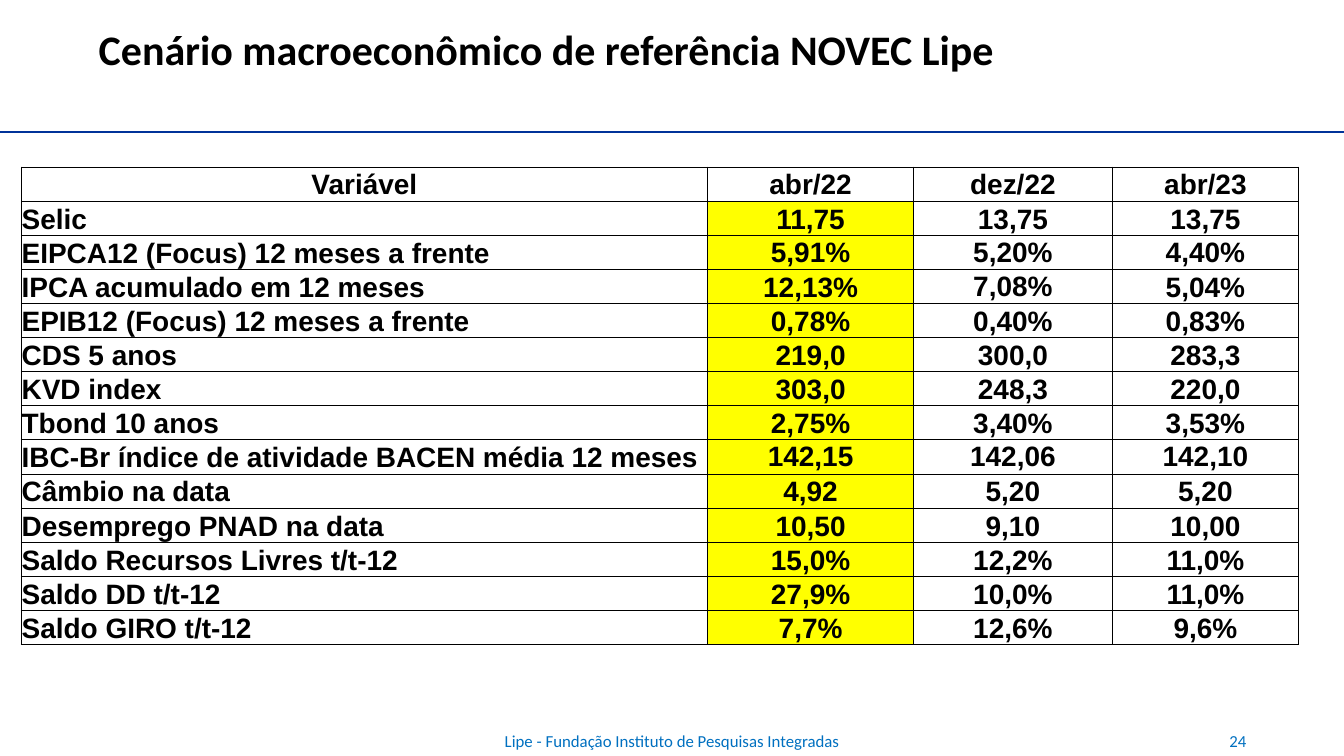
from typing import NamedTuple

from lxml.etree import SubElement
from pptx import Presentation
from pptx.dml.color import RGBColor
from pptx.enum.shapes import MSO_CONNECTOR
from pptx.enum.text import MSO_ANCHOR as Anchor, PP_ALIGN as Align
from pptx.oxml.ns import qn
from pptx.util import Inches, Pt

WIDTH, HEIGHT = 26.67, 15
BLACK, NAVY, BLUE, YELLOW = "000000", "003399", "0070C0", "FFFF00"
COLUMN_WIDTHS = (13.62, 4.09, 3.94, 3.7)
ROW_HEIGHT = 0.67
TABLE_LEFT, TABLE_TOP = 0.42, 3.31
HIGHLIGHT_COLUMN = 1


class Box(NamedTuple):
    left: float
    top: float
    width: float
    height: float


class Indicator(NamedTuple):
    name: str
    values: tuple[str, str, str]
    centred: tuple[int, ...] = ()  # columns whose text sits in the middle


HEADER = Indicator("Variável", ("abr/22", "dez/22", "abr/23"))
INDICATORS = (
    Indicator("Selic", ("11,75", "13,75", "13,75")),
    Indicator("EIPCA12 (Focus) 12 meses a frente", ("5,91%", "5,20%", "4,40%"), (1, 2, 3)),
    Indicator("IPCA acumulado em 12 meses", ("12,13%", "7,08%", "5,04%"), (2,)),
    Indicator("EPIB12 (Focus) 12 meses a frente", ("0,78%", "0,40%", "0,83%")),
    Indicator("CDS 5 anos", ("219,0", "300,0", "283,3")),
    Indicator("KVD index", ("303,0", "248,3", "220,0")),
    Indicator("Tbond 10 anos", ("2,75%", "3,40%", "3,53%")),
    Indicator("IBC-Br índice de atividade BACEN média 12 meses",
              ("142,15", "142,06", "142,10"), (1, 2, 3)),
    Indicator("Câmbio na data", ("4,92", "5,20", "5,20")),
    Indicator("Desemprego PNAD na data", ("10,50", "9,10", "10,00")),
    Indicator("Saldo Recursos Livres t/t-12", ("15,0%", "12,2%", "11,0%")),
    Indicator("Saldo DD t/t-12", ("27,9%", "10,0%", "11,0%")),
    Indicator("Saldo GIRO t/t-12", ("7,7%", "12,6%", "9,6%")),
)


def rgb(value: str) -> RGBColor:
    return RGBColor.from_string(value)


def write(tf, text: str, *, size: float, font: str, color: str = BLACK,
          bold: bool = False, align=Align.LEFT, spacing: float = 1.0) -> None:
    p = tf.paragraphs[0]
    p.alignment, p.line_spacing = align, spacing
    r = p.add_run()
    r.text = text
    r.font.size, r.font.name, r.font.bold = Pt(size), font, bold
    r.font.color.rgb = rgb(color)


def add_text(slide, box: Box, text: str, **text_format) -> None:
    s = slide.shapes.add_textbox(*map(Inches, box))
    s.text_frame.word_wrap = True
    s.text_frame.vertical_anchor = Anchor.MIDDLE
    write(s.text_frame, text, font="Calibri", **text_format)


def add_rule(slide, y: float) -> None:
    s = slide.shapes.add_connector(
        MSO_CONNECTOR.STRAIGHT, 0, Inches(y), Inches(WIDTH), Inches(y))
    s.line.color.rgb, s.line.width = rgb(NAVY), Pt(3)
    SubElement(s._element.spPr, qn("a:effectLst"))


def set_borders(cell, **widths: float) -> None:
    """Draw black borders; keys are the sides L, R, T and B, in that order."""
    tc_pr = cell._tc.get_or_add_tcPr()
    for side, width in widths.items():
        ln = SubElement(tc_pr, qn(f"a:ln{side}"), w=str(Pt(width)))
        SubElement(SubElement(ln, qn("a:solidFill")), qn("a:srgbClr"), val=BLACK)


def fill_cell(cell, text: str, *, row: int, col: int, anchor) -> None:
    cell.margin_left = cell.margin_right = cell.margin_top = Inches(0.01)
    cell.margin_bottom = 0
    cell.vertical_anchor = anchor
    edge = 1 if row else 0.5
    set_borders(cell, L=edge, R=edge, T=edge, B=1)
    if row and col == HIGHLIGHT_COLUMN:
        cell.fill.solid()
        cell.fill.fore_color.rgb = rgb(YELLOW)
    else:
        cell.fill.background()
    align = Align.LEFT if row and col == 0 else Align.CENTER
    write(cell.text_frame, text, size=40, font="Arial", bold=True, align=align)


def add_indicator_table(slide, lines: tuple[Indicator, ...]) -> None:
    box = Box(TABLE_LEFT, TABLE_TOP, sum(COLUMN_WIDTHS), ROW_HEIGHT * len(lines))
    table = slide.shapes.add_table(
        len(lines), len(COLUMN_WIDTHS), *map(Inches, box)).table
    table.first_row = table.horz_banding = False
    for column, width in zip(table.columns, COLUMN_WIDTHS):
        column.width = Inches(width)
    for row, line in enumerate(lines):
        table.rows[row].height = Inches(ROW_HEIGHT)
        for col, text in enumerate((line.name, *line.values)):
            anchor = Anchor.MIDDLE if col in line.centred else Anchor.BOTTOM
            fill_cell(table.cell(row, col), text, row=row, col=col, anchor=anchor)


def main() -> None:
    prs = Presentation()
    prs.slide_width, prs.slide_height = Inches(WIDTH), Inches(HEIGHT)
    slide = prs.slides.add_slide(prs.slide_layouts[6])

    add_rule(slide, 2.62)
    add_text(slide, Box(1.86, 0.41, 23, 1.26),
             "Cenário macroeconômico de referência NOVEC Lipe",
             size=60, bold=True, align=Align.JUSTIFY, spacing=0.9)
    add_indicator_table(slide, (HEADER, *INDICATORS))
    add_text(slide, Box((WIDTH - 9) / 2, 14.3, 9, 0.8),
             "Lipe - Fundação Instituto de Pesquisas Integradas",
             size=24, color=BLUE, align=Align.CENTER)
    add_text(slide, Box(18.83, 14.3, 6, 0.8), "24",
             size=24, color=BLUE, align=Align.RIGHT)

    prs.save("out.pptx")


if __name__ == "__main__":
    main()
